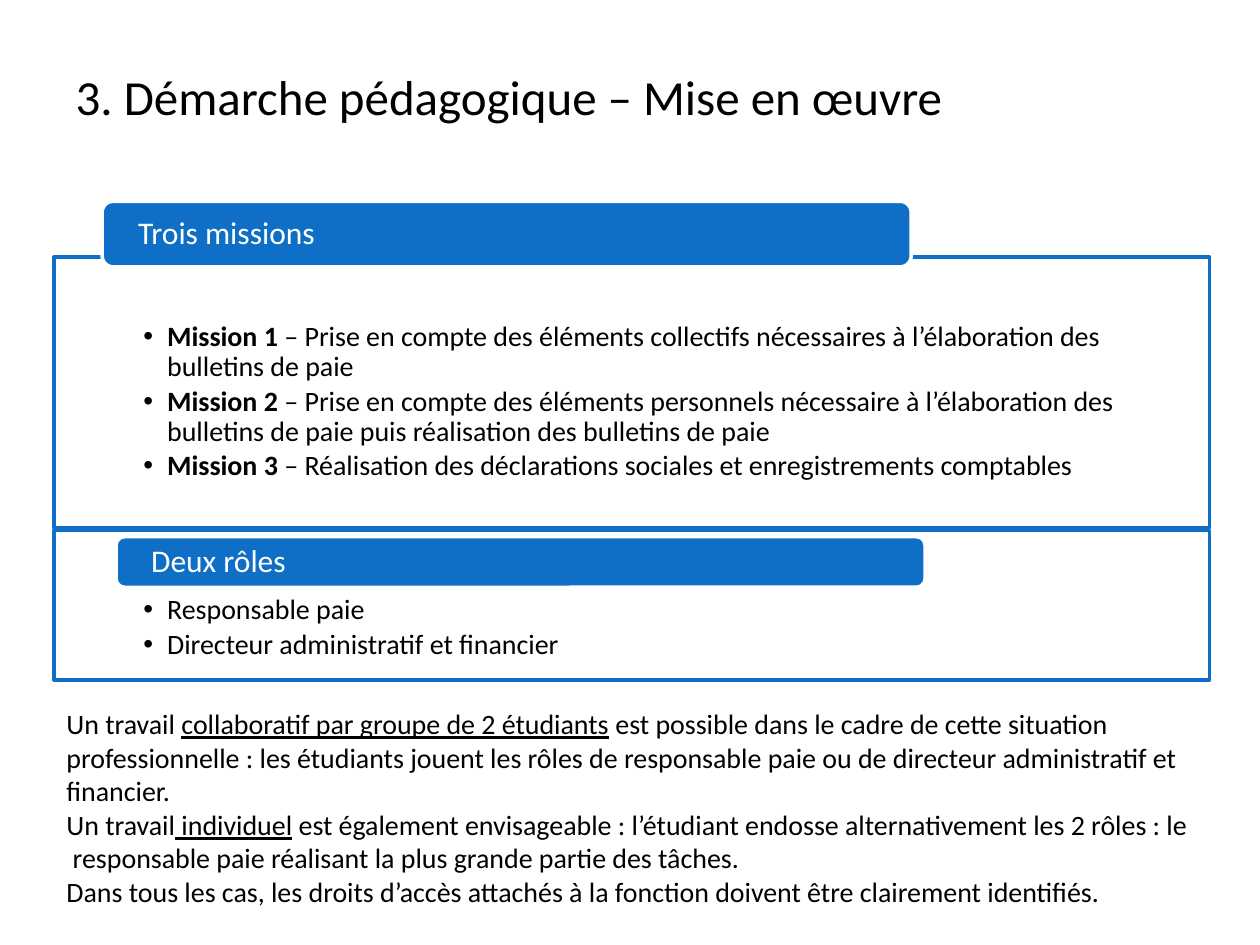
"""Build the slide on missions and roles."""
from pptx import Presentation
from pptx.dml.color import RGBColor
from pptx.enum.shapes import MSO_SHAPE
from pptx.enum.text import MSO_ANCHOR, MSO_AUTO_SIZE, PP_ALIGN
from pptx.util import Cm, Pt

BLUE = RGBColor(0x0F, 0x6F, 0xC6)
WHITE = RGBColor(0xFF, 0xFF, 0xFF)
BLACK = RGBColor(0, 0, 0)
ROUND = MSO_SHAPE.ROUNDED_RECTANGLE
MIDDLE = MSO_ANCHOR.MIDDLE
TOP = MSO_ANCHOR.TOP
FIXED = MSO_AUTO_SIZE.NONE
LEFT = PP_ALIGN.LEFT
FONT = "Calibri"
EDGE = 1.09
WIDE = 23.29

TASKS = [
    [("Mission 1 ", True), ("– Prise en compte des éléments collectifs nécessaires "
                            "à l’élaboration des bulletins de paie", False)],
    [("Mission 2 ", True), ("– Prise en compte des éléments personnels nécessaire "
                            "à l’élaboration des bulletins de paie puis réalisation "
                            "des bulletins de paie", False)],
    [("Mission 3 ", True), ("– Réalisation des déclarations sociales et "
                            "enregistrements comptables", False)],
]
ROLES = [
    [("Responsable paie", False)],
    [("Directeur administratif et financier", False)],
]
NOTES = [
    [("Un travail ", False), ("collaboratif par groupe de 2 étudiants", True),
     (" est possible dans le cadre de cette situation professionnelle : les étudiants "
      "jouent les rôles de responsable paie ou de directeur administratif et "
      "financier.", False)],
    [("Un travail", False), (" individuel", True),
     (" est également envisageable : l’étudiant endosse alternativement les 2 rôles : "
      "le  responsable paie réalisant la plus grande partie des tâches.", False)],
    [("Dans tous les cas, les droits d’accès attachés à la fonction doivent être "
      "clairement identifiés.", False)],
]


def place(shape, left, top, width, height):
    """Move and size a shape, in centimetres."""
    shape.left, shape.top = Cm(left), Cm(top)
    shape.width, shape.height = Cm(width), Cm(height)


def style(run, size, color):
    """Set the font of a run."""
    run.font.name = FONT
    run.font.size = Pt(size)
    run.font.color.rgb = color


def paint(shape, fill, line):
    """Set the fill and outline of a shape."""
    shape.fill.solid()
    shape.fill.fore_color.rgb = fill
    shape.line.color.rgb = line
    shape.line.width = Pt(2)


def write(frame, rows, mark):
    """Write rows of runs, with bold or underline on the marked ones."""
    for i, row in enumerate(rows):
        par = frame.paragraphs[0] if i == 0 else frame.add_paragraph()
        for text, flag in row:
            run = par.add_run()
            run.text = text
            style(run, 16, BLACK)
            if flag:
                setattr(run.font, mark, True)


def add_title(shape, text):
    """Fill the title placeholder."""
    place(shape, 1.27, 0.76, 22.86, 2.36)
    frame = shape.text_frame
    frame.text = text
    frame.vertical_anchor = MIDDLE
    par = frame.paragraphs[0]
    par.alignment = LEFT
    style(par.runs[0], 28, BLACK)


def add_list(shape, top, height, rows):
    """Turn a body placeholder into a framed list."""
    place(shape, EDGE, top, WIDE, height)
    paint(shape, WHITE, BLUE)
    frame = shape.text_frame
    frame.auto_size = FIXED
    frame.vertical_anchor = TOP
    frame.margin_left = frame.margin_right = Cm(1.8)
    frame.margin_top, frame.margin_bottom = Cm(1.32), Cm(0.3)
    write(frame, rows, "bold")
    for par in frame.paragraphs:
        par.line_spacing = 0.9
        par.space_before, par.space_after = Pt(0), Pt(2.4)
        props = par._p.get_or_add_pPr()
        props.set("marL", str(Cm(0.48)))
        props.set("indent", str(-Cm(0.48)))


def add_head(slide, left, top, height, text):
    """Add a rounded heading bar."""
    shape = slide.shapes.add_shape(ROUND, Cm(left), Cm(top), Cm(16.31), Cm(height))
    shape.shadow.inherit = False
    paint(shape, BLUE, WHITE)
    frame = shape.text_frame
    frame.text = text
    frame.vertical_anchor = MIDDLE
    frame.margin_left = frame.margin_right = Cm(0.66)
    frame.margin_top = frame.margin_bottom = 0
    par = frame.paragraphs[0]
    par.alignment = LEFT
    par.line_spacing = 0.9
    style(par.runs[0], 18, WHITE)


def add_notes(slide, rows):
    """Add the closing text."""
    box = slide.shapes.add_textbox(Cm(EDGE), Cm(14.12), Cm(23.19), Cm(4.37))
    box.text_frame.word_wrap = True
    write(box.text_frame, rows, "underline")


def main():
    """Build and save the slide."""
    deck = Presentation()
    deck.slide_width, deck.slide_height = Cm(25.4), Cm(19.05)
    slide = deck.slides.add_slide(deck.slide_layouts[3])
    title, first, second = list(slide.placeholders)[:3]
    add_title(title, "3. Démarche pédagogique – Mise en œuvre")
    add_list(first, 5.18, 5.46, TASKS)
    add_list(second, 10.69, 3.02, ROLES)
    add_head(slide, 2.06, 4.06, 1.32, "Trois missions")
    add_head(slide, 2.34, 10.82, 1.02, "Deux rôles")
    add_notes(slide, NOTES)
    deck.save("out.pptx")


if __name__ == "__main__":
    main()
